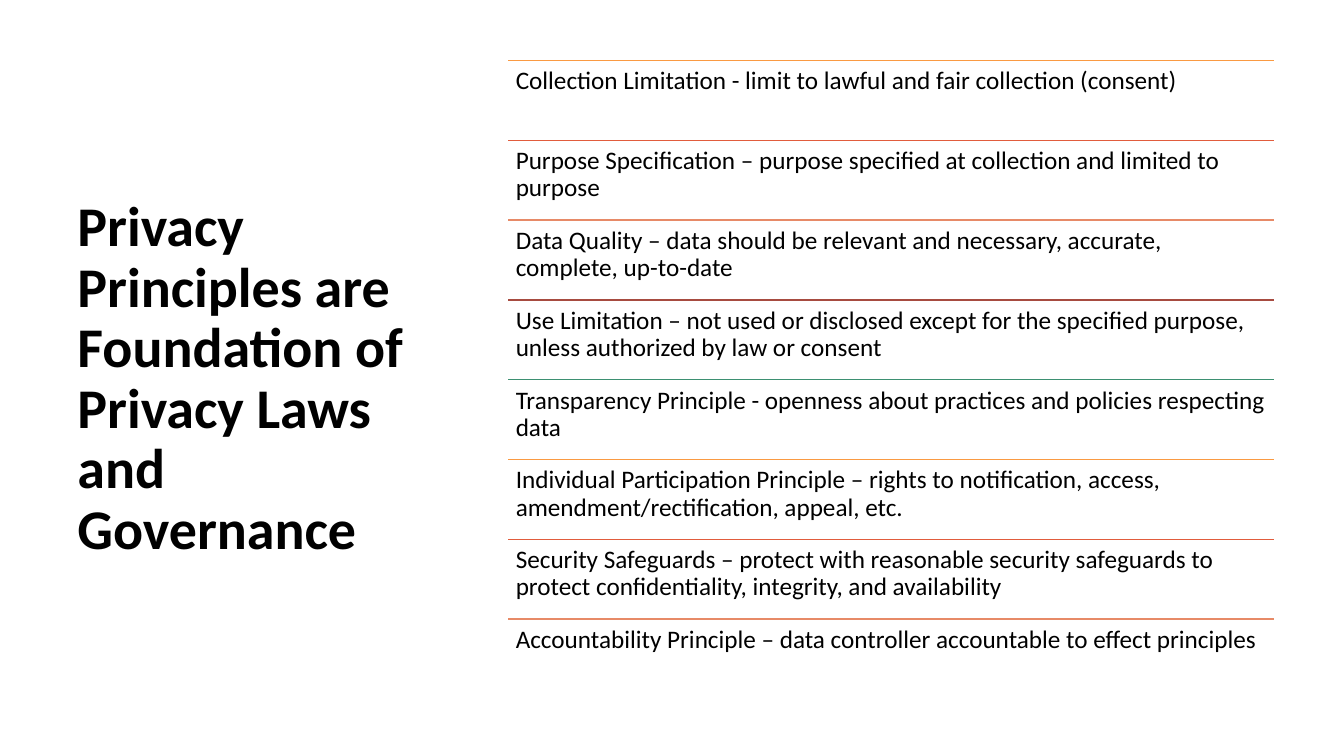
"""Build a slide listing eight privacy principles beside a bold title."""
from itertools import cycle

from lxml.etree import SubElement
from pptx import Presentation
from pptx.dml.color import RGBColor
from pptx.enum.shapes import MSO_CONNECTOR
from pptx.enum.text import MSO_ANCHOR
from pptx.oxml.ns import qn
from pptx.util import Pt

BLACK = RGBColor(0x00, 0x00, 0x00)
ORANGE = RGBColor(0xFA, 0x9A, 0x42)
RED = RGBColor(0xE1, 0x5C, 0x3D)
SALMON = RGBColor(0xE7, 0x8A, 0x67)
BROWN = RGBColor(0xA7, 0x4B, 0x40)
GREEN = RGBColor(0x3D, 0x90, 0x72)
RULE_COLORS = (ORANGE, RED, SALMON, BROWN, GREEN)

TITLE = "Privacy Principles are Foundation of Privacy Laws and Governance"
PRINCIPLES = (
    "Collection Limitation - limit to lawful and fair collection (consent)",
    "Purpose Specification – purpose specified at collection and limited to purpose",
    "Data Quality – data should be relevant and necessary, accurate, complete, up-to-date",
    "Use Limitation – not used or disclosed except for the specified purpose, "
    "unless authorized by law or consent",
    "Transparency Principle - openness about practices and policies respecting data",
    "Individual Participation Principle – rights to notification, access, "
    "amendment/rectification, appeal, etc.",
    "Security Safeguards – protect with reasonable security safeguards to protect "
    "confidentiality, integrity, and availability",
    "Accountability Principle – data controller accountable to effect principles",
)
TOP, HEIGHT = 43.2, 456
LIST_LEFT, LIST_WIDTH = 363, 547
ROW_HEIGHT = HEIGHT / len(PRINCIPLES)


def add_text(page, text, left, top, width, height, size):
    box = page.shapes.add_textbox(Pt(left), Pt(top), Pt(width), Pt(height))
    frame = box.text_frame
    frame.word_wrap = True
    frame.text = text
    para = frame.paragraphs[0]
    para.line_spacing = 0.9
    font = para.runs[0].font
    font.name = "Calibri"
    font.size = Pt(size)
    font.color.rgb = BLACK
    return frame


deck = Presentation()
deck.slide_width, deck.slide_height = Pt(960), Pt(540)
page = deck.slides.add_slide(deck.slide_layouts[6])

title = add_text(page, TITLE, 48.24, TOP, 275, HEIGHT, 40)
title.vertical_anchor = MSO_ANCHOR.MIDDLE
title.paragraphs[0].runs[0].font.bold = True

for row, (principle, color) in enumerate(zip(PRINCIPLES, cycle(RULE_COLORS))):
    top = TOP + row * ROW_HEIGHT
    rule = page.shapes.add_connector(
        MSO_CONNECTOR.STRAIGHT, Pt(LIST_LEFT), Pt(top), Pt(LIST_LEFT + LIST_WIDTH), Pt(top)
    )
    rule.line.color.rgb = color
    rule.line.width = Pt(1)
    SubElement(rule._element.spPr, qn("a:effectLst"))

    frame = add_text(page, principle, LIST_LEFT, top, LIST_WIDTH, ROW_HEIGHT, 18)
    frame.margin_left = frame.margin_right = Pt(5.4)
    frame.margin_top = frame.margin_bottom = Pt(5.4)

deck.save("out.pptx")
